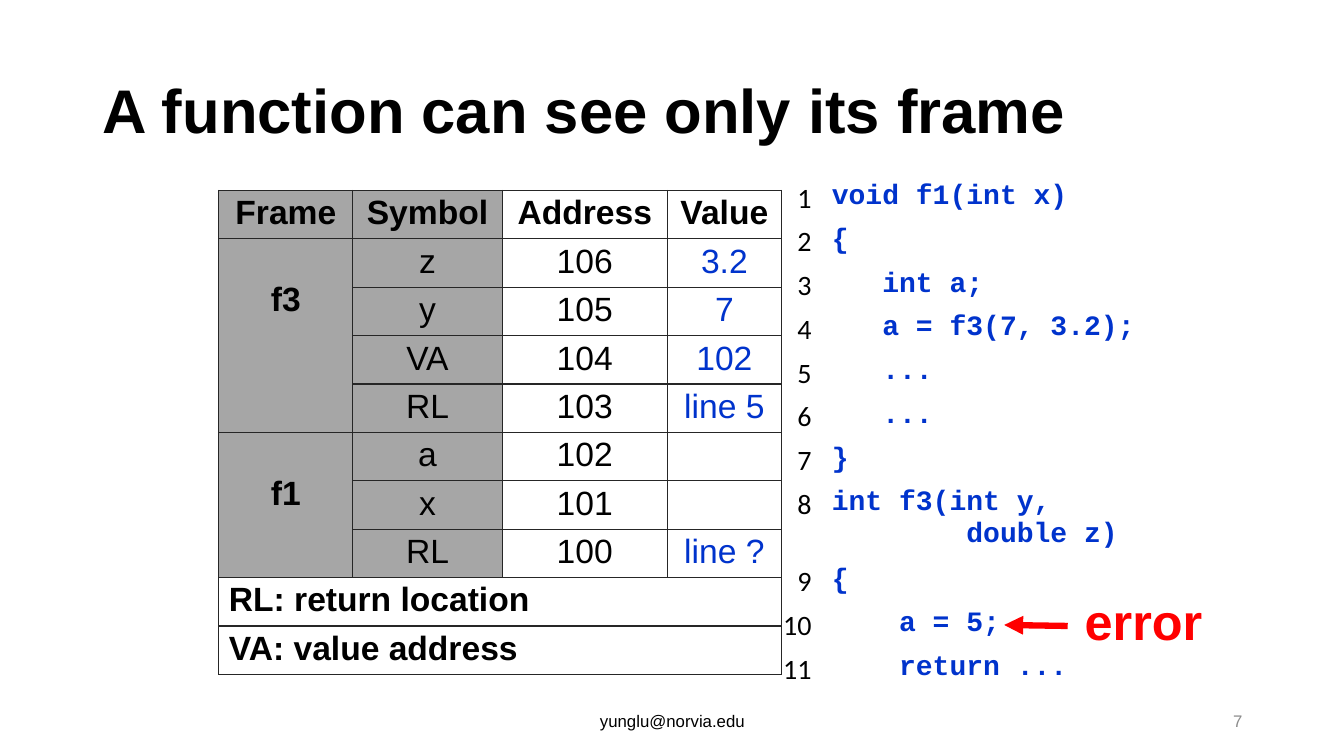
from lxml.etree import SubElement
from pptx import Presentation
from pptx.dml.color import RGBColor
from pptx.enum.shapes import MSO_CONNECTOR as Connector
from pptx.enum.text import MSO_ANCHOR as Anchor, PP_ALIGN as Align
from pptx.oxml.ns import qn
from pptx.util import Inches, Pt

BLACK, BLUE, RED, GRAY = "000000", "0033CC", "FF0000", "A6A6A6"
PAGE_GRAY, BORDER = "8C8C8C", "262626"

TITLE = "A function can see only its frame"
EMAIL = "yunglu@norvia.edu"
PAGE = "7"
HEADINGS = ("Frame", "Symbol", "Address", "Value")
FRAMES = [
    ("f3", [("z", "106", "3.2"), ("y", "105", "7"),
            ("VA", "104", "102"), ("RL", "103", "line 5")]),
    ("f1", [("a", "102", ""), ("x", "101", ""), ("RL", "100", "line ?")]),
]
LEGEND = ["RL: return location", "VA: value address"]
CODE = [
    "void f1(int x)",
    "{",
    "   int a;",
    "   a = f3(7, 3.2);",
    "   ...",
    "   ...",
    "}",
    "int f3(int y,\n        double z)",
    "{",
    "    a = 5;",
    "    return ...",
]


def color(value):
    return RGBColor.from_string(value)


def write(frame, text, size, ink=BLACK, bold=False, align=Align.LEFT, font="Arial"):
    frame.text = text
    for paragraph in frame.paragraphs:
        paragraph.alignment = align
        for run in paragraph.runs:
            run.font.name = font
            run.font.size = Pt(size)
            run.font.bold = bold
            run.font.color.rgb = color(ink)


def add_label(place, text, size, wrap=True, anchor=Anchor.MIDDLE, **style):
    frame = slide.shapes.add_textbox(*map(Inches, place)).text_frame
    frame.word_wrap = wrap
    frame.vertical_anchor = anchor
    write(frame, text, size, **style)
    return frame


def add_grid(left, top, widths, row_height, count):
    grid = slide.shapes.add_table(count, len(widths), Inches(left), Inches(top),
                                  Inches(sum(widths)), Inches(row_height * count)).table
    grid.horz_banding = False
    for column, width in zip(grid.columns, widths):
        column.width = Inches(width)
    for row in grid.rows:
        row.height = Inches(row_height)
    return grid


def outline(cell):
    properties = cell._tc.get_or_add_tcPr()
    for side in ("lnL", "lnR", "lnT", "lnB"):
        edge = SubElement(properties, qn(f"a:{side}"), w=str(Pt(1)))
        SubElement(SubElement(edge, qn("a:solidFill")), qn("a:srgbClr"), val=BORDER)


def fill_cell(cell, text, size, shade=None, **style):
    if shade:
        cell.fill.solid()
        cell.fill.fore_color.rgb = color(shade)
    else:
        cell.fill.background()
    write(cell.text_frame, text, size, **style)


def add_code():
    listing = add_grid(7.54, 1.75, (0.61, 3.51), 0.41, len(CODE))
    for index, line in enumerate(CODE):
        fill_cell(listing.cell(index, 0), str(index + 1), 20,
                  align=Align.RIGHT, font="Calibri")
        fill_cell(listing.cell(index, 1), line, 20, ink=BLUE, bold=True,
                  font="Courier New")


def add_stack():
    count = 1 + sum(len(symbols) for _, symbols in FRAMES) + len(LEGEND)
    stack = add_grid(2.17, 1.89, (1.33, 1.48, 1.64, 1.13), 0.47, count)
    for cell in stack.iter_cells():
        outline(cell)
        cell.fill.background()
        cell.margin_top = cell.margin_bottom = Inches(0.04)

    shades = (GRAY, GRAY, None, None)
    for column, heading in enumerate(HEADINGS):
        fill_cell(stack.cell(0, column), heading, 24, shades[column],
                  bold=True, align=Align.CENTER)

    row = 1
    for function, symbols in FRAMES:
        owner = stack.cell(row, 0)
        owner.merge(stack.cell(row + len(symbols) - 1, 0))
        owner.margin_top = Inches(0.42)
        fill_cell(owner, function, 24, GRAY, bold=True, align=Align.CENTER)
        for symbol in symbols:
            for column, text in enumerate(symbol, start=1):
                fill_cell(stack.cell(row, column), text, 24, shades[column],
                          ink=BLUE if column == 3 else BLACK, align=Align.CENTER)
            row += 1

    for row, meaning in enumerate(LEGEND, start=row):
        stack.cell(row, 0).merge(stack.cell(row, 3))
        fill_cell(stack.cell(row, 0), meaning, 24, bold=True)


def add_error():
    arrow = slide.shapes.add_connector(Connector.STRAIGHT, Inches(10.59), Inches(6.21),
                                       Inches(9.96), Inches(6.2))
    arrow.line.width = Pt(4.5)
    arrow.line.color.rgb = color(RED)
    SubElement(arrow.line._get_or_add_ln(), qn("a:tailEnd"), type="triangle")
    SubElement(arrow._element.spPr, qn("a:effectLst"))
    add_label((10.66, 5.81, 1.38, 0.71), "error", 36, wrap=False, anchor=Anchor.TOP,
              ink=RED, bold=True)


deck = Presentation()
deck.slide_width, deck.slide_height = Inches(13.33), Inches(7.5)
slide = deck.slides.add_slide(deck.slide_layouts[6])

heading = add_label((0.92, 0.4, 11.5, 1.45), TITLE, 44, bold=True)
heading.paragraphs[0].line_spacing = 0.9
add_label((4.42, 6.95, 4.5, 0.4), EMAIL, 12, align=Align.CENTER)
add_label((9.42, 6.95, 3, 0.4), PAGE, 12, ink=PAGE_GRAY, align=Align.RIGHT)
add_code()
add_stack()
add_error()
deck.save("out.pptx")
